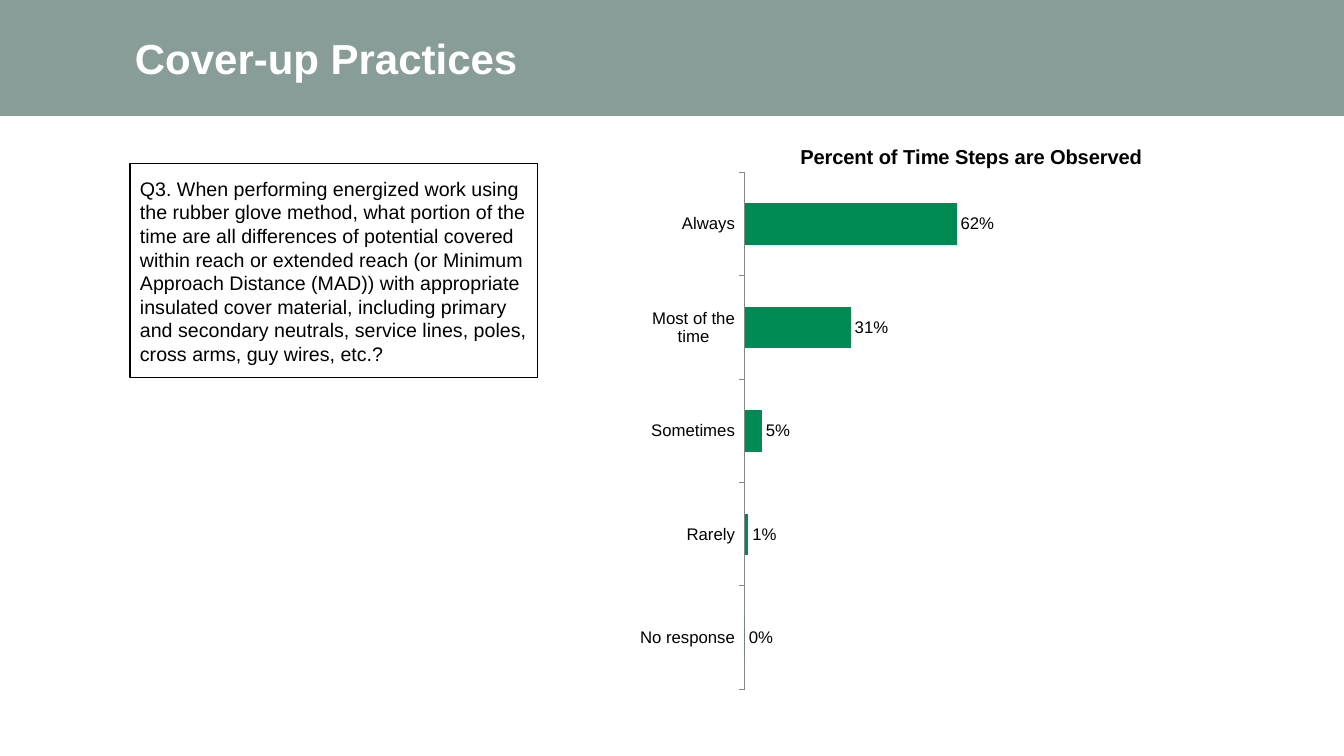
from lxml import etree
from pptx import Presentation
from pptx import util as u
from pptx.chart.data import CategoryChartData
from pptx.dml.color import RGBColor
from pptx.enum import chart as charts, shapes, text
from pptx.oxml import ns

PX = 914400 / 100.8
BLACK = RGBColor(0x00, 0x00, 0x00)
WHITE = RGBColor(0xFF, 0xFF, 0xFF)
SAGE = RGBColor(0x88, 0x9D, 0x98)
GREEN = RGBColor(0x00, 0x8A, 0x53)
GREY = RGBColor(0x86, 0x86, 0x86)

QUESTION = (
    "Q3. When performing energized work using the rubber glove method, what "
    "portion of the time are all differences of potential covered within reach "
    "or extended reach (or Minimum Approach Distance (MAD)) with appropriate "
    "insulated cover material, including primary and secondary neutrals, "
    "service lines, poles, cross arms, guy wires, etc.?"
)
ANSWERS = {
    "No response": 0,
    "Rarely": 0.01,
    "Sometimes": 0.05,
    "Most of the time": 0.31,
    "Always": 0.62,
}


def px(*lengths):
    return [u.Emu(round(length * PX)) for length in lengths]


def style_font(font, size, color, bold=False):
    font.name = "Arial"
    font.size = u.Pt(size)
    font.bold = bold
    font.color.rgb = color


def add_rectangle(page, place, fill, line=None):
    box = page.shapes.add_shape(shapes.MSO_SHAPE.RECTANGLE, *px(*place))
    box.shadow.inherit = False
    box.fill.solid()
    box.fill.fore_color.rgb = fill
    if line is None:
        box.line.fill.background()
    else:
        box.line.color.rgb = line
        box.line.width = u.Pt(0.75)
    return box


def write_text(box, words, size, color, bold=False):
    """Fill a box with one left-aligned, vertically centred paragraph."""
    frame = box.text_frame
    frame.word_wrap = True
    frame.vertical_anchor = text.MSO_ANCHOR.MIDDLE
    para = frame.paragraphs[0]
    para.alignment = text.PP_ALIGN.LEFT
    span = para.add_run()
    span.text = words
    style_font(span.font, size, color, bold)
    return frame


def add_heading(page, words):
    box = page.shapes.add_textbox(*px(125, 0, 907, 116))
    frame = write_text(box, words, 30, WHITE, bold=True)
    frame.margin_bottom = 0
    frame.paragraphs[0].line_spacing = 0.9


def set_layout(parent, index, target=None, **fractions):
    """Place a chart part by fractions of the chart's size."""
    for old in parent.findall(ns.qn("c:layout")):
        parent.remove(old)
    layout = etree.Element(ns.qn("c:layout"))
    manual = etree.SubElement(layout, ns.qn("c:manualLayout"))
    settings = {"layoutTarget": target} if target else {}
    settings.update(xMode="edge", yMode="edge", **fractions)
    for name, value in settings.items():
        etree.SubElement(manual, ns.qn(f"c:{name}")).set("val", str(value))
    parent.insert(index, layout)


def add_title(chart, words):
    chart.has_title = True
    title = chart.chart_title
    span = title.text_frame.paragraphs[0].add_run()
    span.text = words
    style_font(span.font, 14.4, BLACK, bold=True)
    title.include_in_layout = True
    set_layout(title._element, 1, x=0.3, y=0.01)


def style_axes(chart):
    answers = chart.category_axis
    answers.major_tick_mark = charts.XL_TICK_MARK.OUTSIDE
    answers.has_major_gridlines = False
    answers.format.line.color.rgb = GREY
    style_font(answers.tick_labels.font, 12, BLACK)
    share = chart.value_axis
    share.minimum_scale = 0
    share.maximum_scale = 1
    share.major_unit = 0.1
    share.has_major_gridlines = False
    share.tick_labels.number_format = "0%"
    share.tick_labels.number_format_is_linked = False
    share.visible = False


def style_bars(plot):
    plot.gap_width = 150
    plot.vary_by_categories = False
    bars = plot.series[0]
    bars.format.fill.solid()
    bars.format.fill.fore_color.rgb = GREEN
    labels = bars.data_labels
    labels.show_value = True
    labels.position = charts.XL_LABEL_POSITION.OUTSIDE_END
    labels.number_format = "0%"
    labels.number_format_is_linked = False
    style_font(labels.font, 12, BLACK)


def add_bar_chart(page, place, title, values):
    data = CategoryChartData(number_format="0%")
    data.categories = list(values)
    data.add_series("Series 1", list(values.values()))
    kind = charts.XL_CHART_TYPE.BAR_CLUSTERED
    chart = page.shapes.add_chart(kind, *px(*place), data).chart
    chart.font.name = "Times New Roman"
    chart.font.size = u.Pt(12)
    chart.font.color.rgb = BLACK
    chart.has_legend = False
    add_title(chart, title)
    style_axes(chart)
    style_bars(chart.plots[0])
    area = chart._chartSpace.chart.plotArea
    set_layout(area, 0, "inner", x=0.2, y=0.065, w=0.66, h=0.896)


def main():
    deck = Presentation()
    deck.slide_width, deck.slide_height = px(1344, 756)
    page = deck.slides.add_slide(deck.slide_layouts[6])
    add_rectangle(page, (0, 0, 1344, 116), SAGE)
    add_bar_chart(page, (640, 135, 519, 577),
                  "Percent of Time Steps are Observed", ANSWERS)
    question = add_rectangle(page, (130, 164, 408, 214), WHITE, BLACK)
    write_text(question, QUESTION, 14, BLACK)
    add_heading(page, "Cover-up Practices")
    deck.save("out.pptx")


if __name__ == "__main__":
    main()
